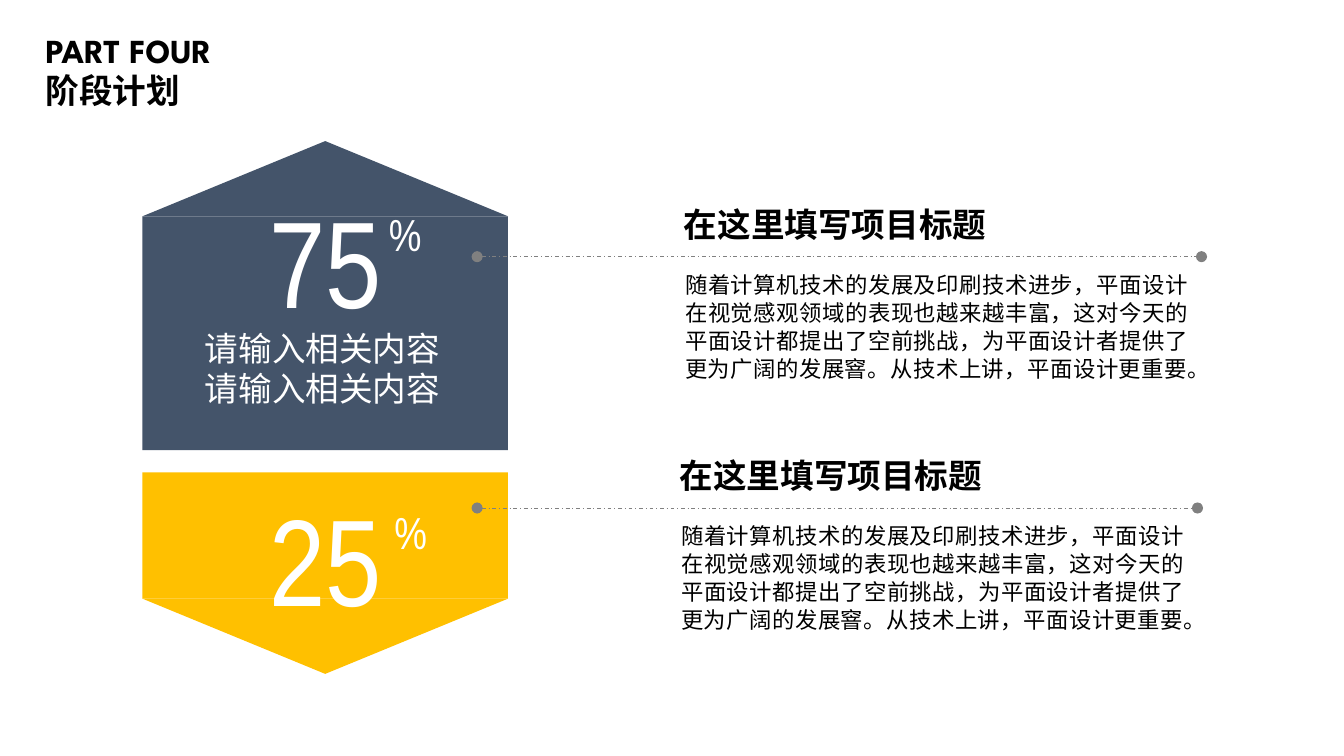
from lxml.etree import SubElement
from pptx import Presentation
from pptx.dml.color import RGBColor
from pptx.enum.dml import MSO_LINE
from pptx.enum.shapes import MSO_CONNECTOR, MSO_SHAPE
from pptx.enum.text import MSO_ANCHOR, PP_ALIGN
from pptx.oxml.ns import qn
from pptx.util import Inches, Pt

CELL = Inches(0.1)
COLUMNS, ROWS = 100, 56.25
SLATE = RGBColor(0x44, 0x54, 0x6A)
AMBER = RGBColor(0xFF, 0xC0, 0x00)
GREY = RGBColor(0x80, 0x80, 0x80)
WHITE = RGBColor(0xFF, 0xFF, 0xFF)
BLACK = RGBColor(0x00, 0x00, 0x00)
NUMERAL_FONT = "Arial Narrow"
TITLE_FONT = "League Spartan"
CHINESE_FONT = "Noto Sans CJK SC"
BLOCK_LEFT, BLOCK_WIDTH, ROOF_HEIGHT = 10.6, 27.2, 5.6
RULE_LEFT = 35.5

SECTION_HEADING = "在这里填写项目标题"
SECTION_BODY = (
    "随着计算机技术的发展及印刷技术进步，平面设计在视觉感观领域的表现也越来越丰富，"
    "这对今天的平面设计都提出了空前挑战，为平面设计者提供了更为广阔的发展窨。"
    "从技术上讲，平面设计更重要。"
)


def cells(*counts):
    """Turn counts of grid cells into slide lengths."""
    return [round(count * CELL) for count in counts]


def write(frame, text, size, font, color=BLACK, bold=False,
          align=PP_ALIGN.LEFT, leading=None):
    """Fill a text frame with evenly formatted paragraphs."""
    frame.word_wrap = True
    frame.vertical_anchor = MSO_ANCHOR.TOP
    frame.text = text
    for paragraph in frame.paragraphs:
        paragraph.alignment = align
        if leading:
            paragraph.line_spacing = Pt(leading)
        paragraph.font.size = Pt(size)
        paragraph.font.bold = bold
        paragraph.font.color.rgb = color
        paragraph.font.name = font
        defaults = paragraph._p.pPr.find(qn("a:defRPr"))
        SubElement(defaults, qn("a:ea"), typeface=CHINESE_FONT)


def add_label(slide, area, text, size, font, **style):
    """Add a text box on the grid."""
    label = slide.shapes.add_textbox(*cells(*area))
    write(label.text_frame, text, size, font, **style)


def add_title(slide, text):
    """Move and format the title placeholder."""
    title = slide.shapes.title
    title.left, title.top, title.width, title.height = cells(2.4, 1.7, 17.3, 7.1)
    write(title.text_frame, text, 18, TITLE_FONT, bold=True)


def add_block(slide, wall_top, wall_height, color, points_down=False):
    """Add a grouped wall with a triangular roof above or below it."""
    block = slide.shapes.add_group_shape()
    roof_top = wall_top + wall_height if points_down else wall_top - ROOF_HEIGHT
    parts = (
        (MSO_SHAPE.RECTANGLE, wall_top, wall_height),
        (MSO_SHAPE.ISOSCELES_TRIANGLE, roof_top, ROOF_HEIGHT),
    )
    for kind, top, height in parts:
        part = block.shapes.add_shape(
            kind, *cells(BLOCK_LEFT, top, BLOCK_WIDTH, height))
        part.shadow.inherit = False
        part.fill.solid()
        part.fill.fore_color.rgb = color
        part.line.fill.background()
    if points_down:
        part._element.spPr.xfrm.set("flipV", "1")


def add_percentage(slide, top, number, sign_left):
    """Add a large number with a small raised percent sign."""
    style = {"color": WHITE, "align": PP_ALIGN.CENTER}
    add_label(slide, (16.7, top, 15, 12.1), number, 66, NUMERAL_FONT, **style)
    add_label(slide, (sign_left, top + 1.6, 7.5, 5), "%", 24, NUMERAL_FONT, **style)


def add_rule(slide, right, y):
    """Add a dash-dot rule with a dot at each end."""
    rule = slide.shapes.add_connector(
        MSO_CONNECTOR.STRAIGHT, *cells(RULE_LEFT, y, right, y))
    rule.line.color.rgb = GREY
    rule.line.width = Pt(0.5)
    rule.line.dash_style = MSO_LINE.DASH_DOT
    for end in ("a:headEnd", "a:tailEnd"):
        SubElement(rule.line._get_or_add_ln(), qn(end), type="oval")
    SubElement(rule._element.spPr, qn("a:effectLst"))


def add_section(slide, right, rule_y):
    """Add a heading above a rule and body text below it."""
    add_rule(slide, right, rule_y)
    add_label(slide, (right - 39.4, rule_y + 0.5, 39.4, 9.3), SECTION_BODY, 12,
              CHINESE_FONT, align=PP_ALIGN.JUSTIFY, leading=15)
    add_label(slide, (right - 39.5, rule_y - 4.45, 25, 4), SECTION_HEADING, 18,
              CHINESE_FONT, bold=True)


def main():
    """Build and save the stage plan slide."""
    deck = Presentation()
    deck.slide_width, deck.slide_height = cells(COLUMNS, ROWS)
    slide = deck.slides.add_slide(deck.slide_layouts[5])
    add_title(slide, "PART FOUR\n阶段计划")
    add_block(slide, 16.1, 17.4, SLATE)
    add_block(slide, 35.15, 9.4, AMBER, points_down=True)
    add_percentage(slide, 13.3, "75", 26.4)
    add_percentage(slide, 35.5, "25", 26.8)
    add_label(slide, (12.6, 23.9, 22.8, 7.1), "请输入相关内容\n请输入相关内容", 18,
              CHINESE_FONT, color=WHITE, align=PP_ALIGN.CENTER)
    add_section(slide, 89.4, 19.1)
    add_section(slide, 89.1, 37.8)
    deck.save("out.pptx")


if __name__ == "__main__":
    main()
